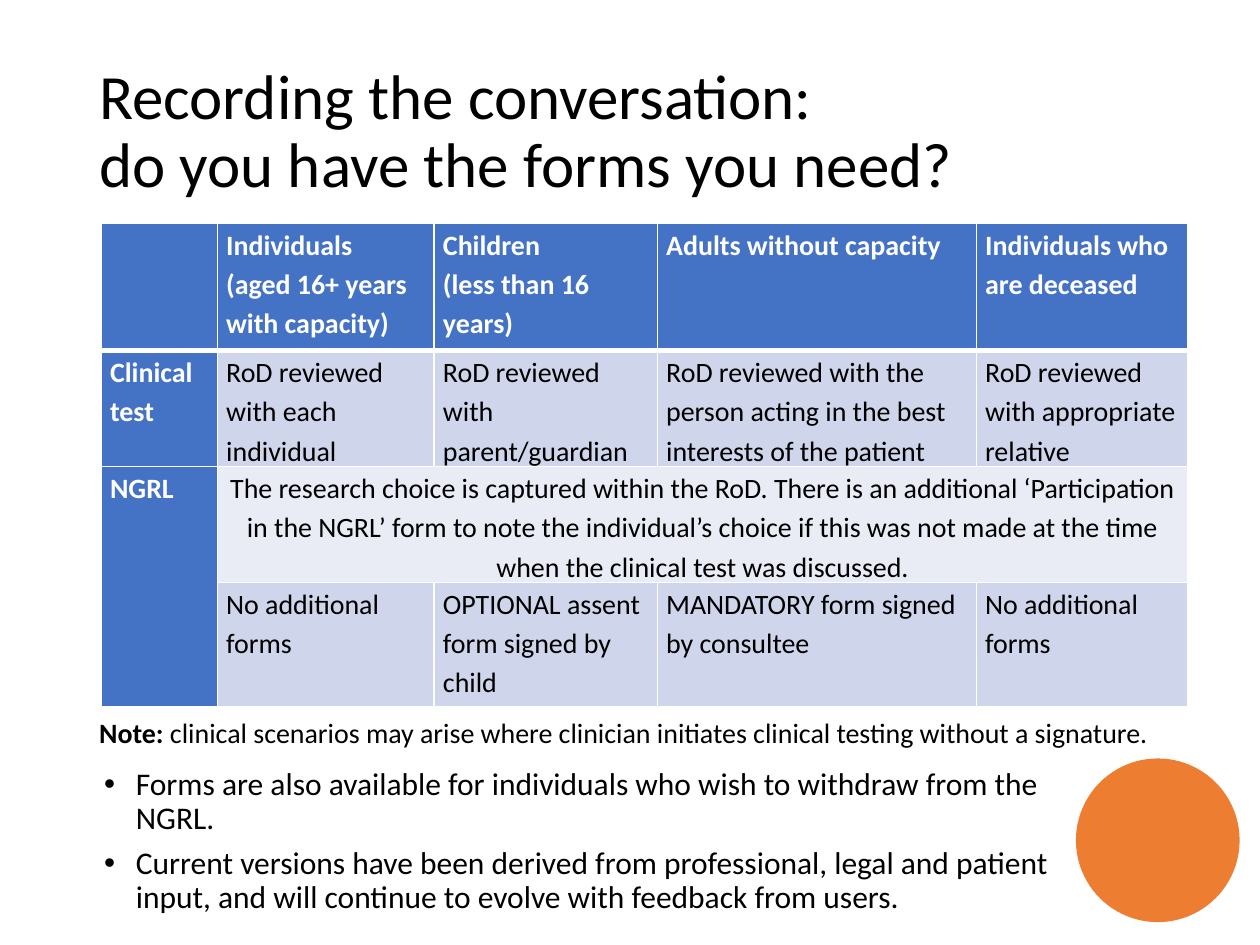
from lxml import etree
from pptx import Presentation
from pptx.dml.color import RGBColor
from pptx.enum.shapes import MSO_SHAPE
from pptx.enum.text import MSO_ANCHOR, PP_ALIGN
from pptx.oxml import parse_xml
from pptx.oxml.ns import nsdecls, qn
from pptx.util import Cm, Pt

OVAL = MSO_SHAPE.OVAL
MIDDLE = MSO_ANCHOR.MIDDLE
LEFT, CENTER, JUSTIFY = PP_ALIGN.LEFT, PP_ALIGN.CENTER, PP_ALIGN.JUSTIFY

BLACK = RGBColor(0x00, 0x00, 0x00)
WHITE = RGBColor(0xFF, 0xFF, 0xFF)
BLUE = RGBColor(0x44, 0x72, 0xC4)
BLUE_TINT = RGBColor(0xCF, 0xD5, 0xEA)
PALE_TINT = RGBColor(0xE9, 0xEB, 0xF5)
ORANGE = RGBColor(0xED, 0x7D, 0x31)
FONT = "Calibri"


def add_run(paragraph, text, size, color=BLACK, bold=False):
    run = paragraph.add_run()
    run.text = text
    run.font.name = FONT
    run.font.size = Pt(size)
    run.font.bold = bold
    run.font.color.rgb = color


def add_border(cell, side, points):
    """Draw a white line on one side (L, R, T or B) of a cell; call before filling it."""
    cell._tc.get_or_add_tcPr().append(parse_xml(
        f'<a:ln{side} {nsdecls("a")} w="{Pt(points)}"><a:solidFill>'
        f'<a:srgbClr val="{WHITE}"/></a:solidFill></a:ln{side}>'))


prs = Presentation()
prs.slide_width = Cm(25.4)
prs.slide_height = Cm(19.05)
slide = prs.slides.add_slide(prs.slide_layouts[6])

# Title
title = slide.shapes.add_textbox(Cm(1.75), Cm(0.84), Cm(21.9), Cm(3.68)).text_frame
title.word_wrap = True
title.vertical_anchor = MIDDLE
heading = title.paragraphs[0]
heading.line_spacing = 0.9
add_run(heading, "Recording the conversation:", 36)
heading.add_line_break()
add_run(heading, "do you have the forms you need?", 36)

# Orange disc
disc = slide.shapes.add_shape(OVAL, Cm(21.69), Cm(15.29), Cm(3.3), Cm(3.3))
disc.shadow.inherit = False
disc.fill.solid()
disc.fill.fore_color.rgb = ORANGE
disc.line.fill.background()

# Table of forms: each cell is a list of paragraphs, None is covered by a merge
FORMS = [
    [[], ["Individuals", "(aged 16+ years with capacity)"],
     ["Children", "(less than 16 years)"],
     ["Adults without capacity"], ["Individuals who are deceased"]],
    [["Clinical test"], ["RoD reviewed with each individual"],
     ["RoD reviewed with parent/guardian"],
     ["RoD reviewed with the person acting in the best interests of the patient"],
     ["RoD reviewed with appropriate relative"]],
    [["NGRL"],
     ["The research choice is captured within the RoD. There is an additional "
      "‘Participation in the NGRL’ form to note the individual’s choice if this was "
      "not made at the time when the clinical test was discussed."],
     None, None, None],
    [None, ["No additional forms"], ["OPTIONAL assent form signed by child"],
     ["MANDATORY form signed by consultee"], ["No additional forms"]],
]
COLUMN_WIDTHS = [2.34, 4.37, 4.5, 6.43, 4.27]
ROW_HEIGHTS = [2.57, 2.16, 2.16, 2.51]
RESEARCH_ROW = 2

forms = slide.shapes.add_table(
    len(ROW_HEIGHTS), len(COLUMN_WIDTHS), Cm(2.04), Cm(4.5),
    Cm(sum(COLUMN_WIDTHS)), Cm(sum(ROW_HEIGHTS))).table
for column, width in zip(forms.columns, COLUMN_WIDTHS):
    column.width = Cm(width)
for row, height in zip(forms.rows, ROW_HEIGHTS):
    row.height = Cm(height)
forms.cell(2, 0).merge(forms.cell(3, 0))
forms.cell(2, 1).merge(forms.cell(2, 4))

for r, row_texts in enumerate(FORMS):
    for c, texts in enumerate(row_texts):
        cell = forms.cell(r, c)
        is_header = r == 0 or c == 0
        is_research = r == RESEARCH_ROW and not is_header
        cell.margin_left = cell.margin_right = Cm(0.18)
        cell.margin_top = cell.margin_bottom = 0
        for side in "LRTB":
            add_border(cell, side, 3 if (r, side) in ((0, "B"), (1, "T")) else 1)
        cell.fill.solid()
        cell.fill.fore_color.rgb = (
            BLUE if is_header else PALE_TINT if is_research else BLUE_TINT)
        for i, text in enumerate(texts or []):
            frame = cell.text_frame
            paragraph = frame.add_paragraph() if i else frame.paragraphs[0]
            paragraph.line_spacing = 1.15
            paragraph.alignment = (
                CENTER if is_research else JUSTIFY if c == 0 else LEFT)
            add_run(paragraph, text, 16, WHITE if is_header else BLACK, is_header)

# Bullets
BULLETS = [
    "Forms are also available for individuals who wish to withdraw from the NGRL.",
    "Current versions have been derived from professional, legal and patient input, "
    "and will continue to evolve with feedback from users.",
]
bullets = slide.shapes.add_textbox(Cm(1.85), Cm(15.37), Cm(20.73), Cm(3.23)).text_frame
bullets.word_wrap = True
for i, text in enumerate(BULLETS):
    paragraph = bullets.add_paragraph() if i else bullets.paragraphs[0]
    properties = paragraph._p.get_or_add_pPr()
    properties.set("marL", str(Cm(0.64)))
    properties.set("indent", str(-Cm(0.64)))
    etree.SubElement(properties, qn("a:buFont"), typeface="Arial")
    etree.SubElement(properties, qn("a:buChar"), char="•")
    paragraph.line_spacing = 0.9
    if i:
        paragraph.space_before = Pt(6)
    add_run(paragraph, text, 18)

# Note under the table
note = slide.shapes.add_textbox(Cm(1.75), Cm(14.3), Cm(24.87), Cm(0.94)).text_frame
note.word_wrap = True
add_run(note.paragraphs[0], "Note:", 16, bold=True)
add_run(note.paragraphs[0],
        " clinical scenarios may arise where clinician initiates clinical testing "
        "without a signature.", 16)

prs.save("out.pptx")
